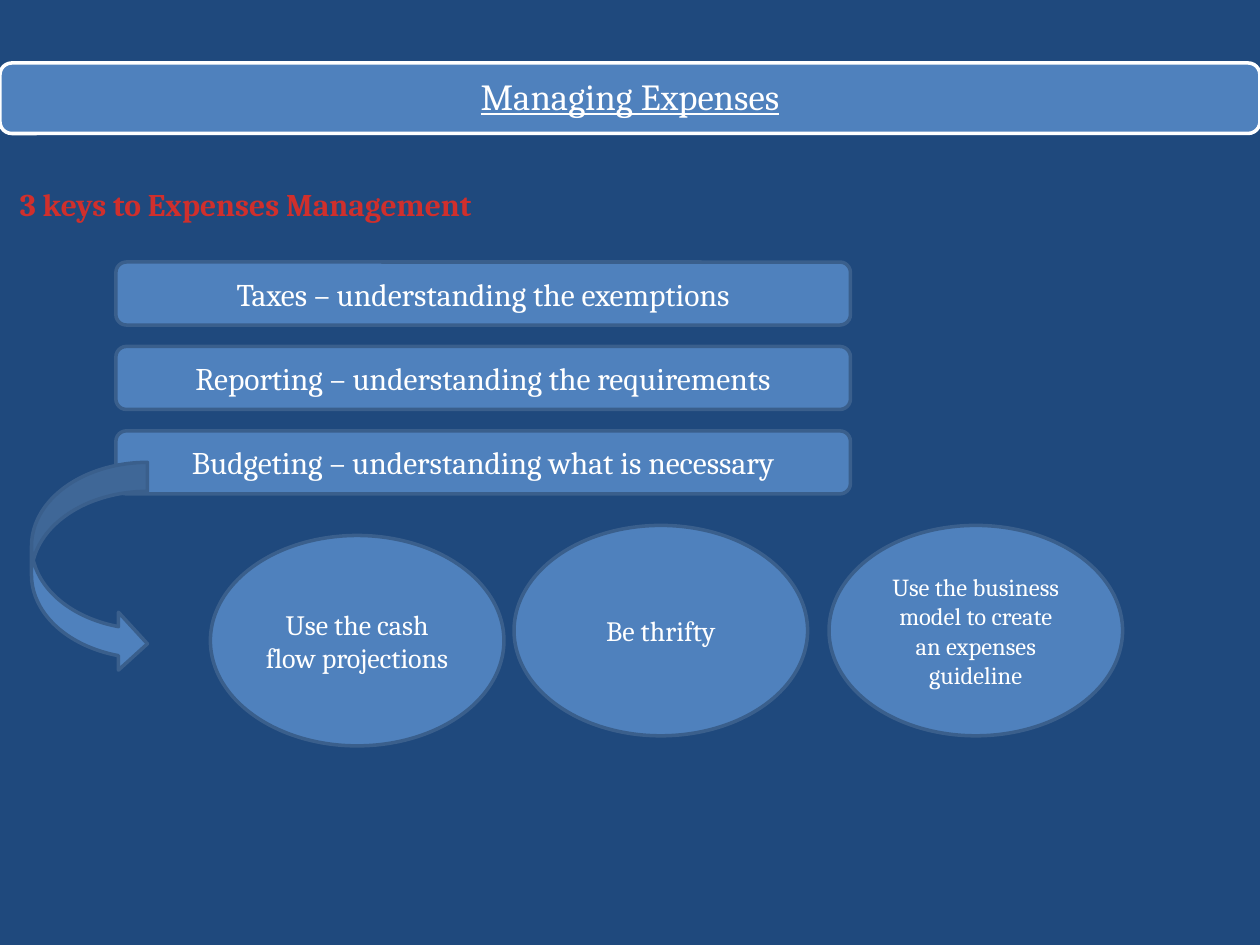
"""Build the Managing Expenses slide."""
from pptx import Presentation
from pptx.dml.color import RGBColor
from pptx.enum.shapes import MSO_SHAPE
from pptx.enum.text import MSO_ANCHOR, PP_ALIGN
from pptx.util import Inches, Pt

COLORS = {
    "background": "1F497D",
    "panel": "4F81BD",
    "outline": "3A5F8C",
    "white": "FFFFFF",
    "heading": "D02F2C",
}
KEYS = [
    "Taxes – understanding the exemptions",
    "Reporting – understanding the requirements",
    "Budgeting – understanding what is necessary",
]
TIPS = [
    (1.67, 4.25, "Use the cash flow projections", 16),
    (4.08, 4.17, "Be thrifty", 16),
    (6.58, 4.17, "Use the business model to create an expenses guideline", 14),
]


def color(name):
    return RGBColor.from_string(COLORS[name])


def write_text(box, text, size, ink="white", wrap=True, **formats):
    frame = box.text_frame
    frame.word_wrap = wrap
    para = frame.paragraphs[0]
    para.alignment = PP_ALIGN.CENTER
    span = para.add_run()
    span.text = text
    values = {"name": "Cambria", "size": Pt(size), **formats}
    for attribute, value in values.items():
        setattr(span.font, attribute, value)
    span.font.color.rgb = color(ink)
    return para


def add_panel(page, kind, place, outline="outline"):
    box = page.shapes.add_shape(kind, *map(Inches, place))
    box.shadow.inherit = False
    box.fill.solid()
    box.fill.fore_color.rgb = color("panel")
    box.line.color.rgb = color(outline)
    box.line.width = Pt(2)
    box.text_frame.vertical_anchor = MSO_ANCHOR.MIDDLE
    return box


def add_title(page, text):
    box = add_panel(page, MSO_SHAPE.ROUNDED_RECTANGLE, (0, 0.5, 10, 0.56), "white")
    para = write_text(box, text, 21, underline=True)
    para.line_spacing = 0.9


def add_heading(page, text):
    box = page.shapes.add_textbox(*map(Inches, (-0.01, 1.42, 3.92, 0.4)))
    write_text(box, text, 18, "heading", wrap=False, bold=True)


def main():
    deck = Presentation()
    deck.slide_width, deck.slide_height = Inches(10), Inches(7.5)
    page = deck.slides.add_slide(deck.slide_layouts[6])
    page.background.fill.solid()
    page.background.fill.fore_color.rgb = color("background")

    add_title(page, "Managing Expenses")
    add_heading(page, "3 keys to Expenses Management")
    for row, text in enumerate(KEYS):
        place = (0.92, 2.08 + 0.67 * row, 5.83, 0.5)
        write_text(add_panel(page, MSO_SHAPE.ROUNDED_RECTANGLE, place), text, 18)
    for left, top, text, size in TIPS:
        place = (left, top, 2.33, 1.67)
        write_text(add_panel(page, MSO_SHAPE.OVAL, place), text, size)
    add_panel(page, MSO_SHAPE.CURVED_RIGHT_ARROW, (0.25, 3.67, 0.92, 1.67))
    deck.save("out.pptx")


if __name__ == "__main__":
    main()
